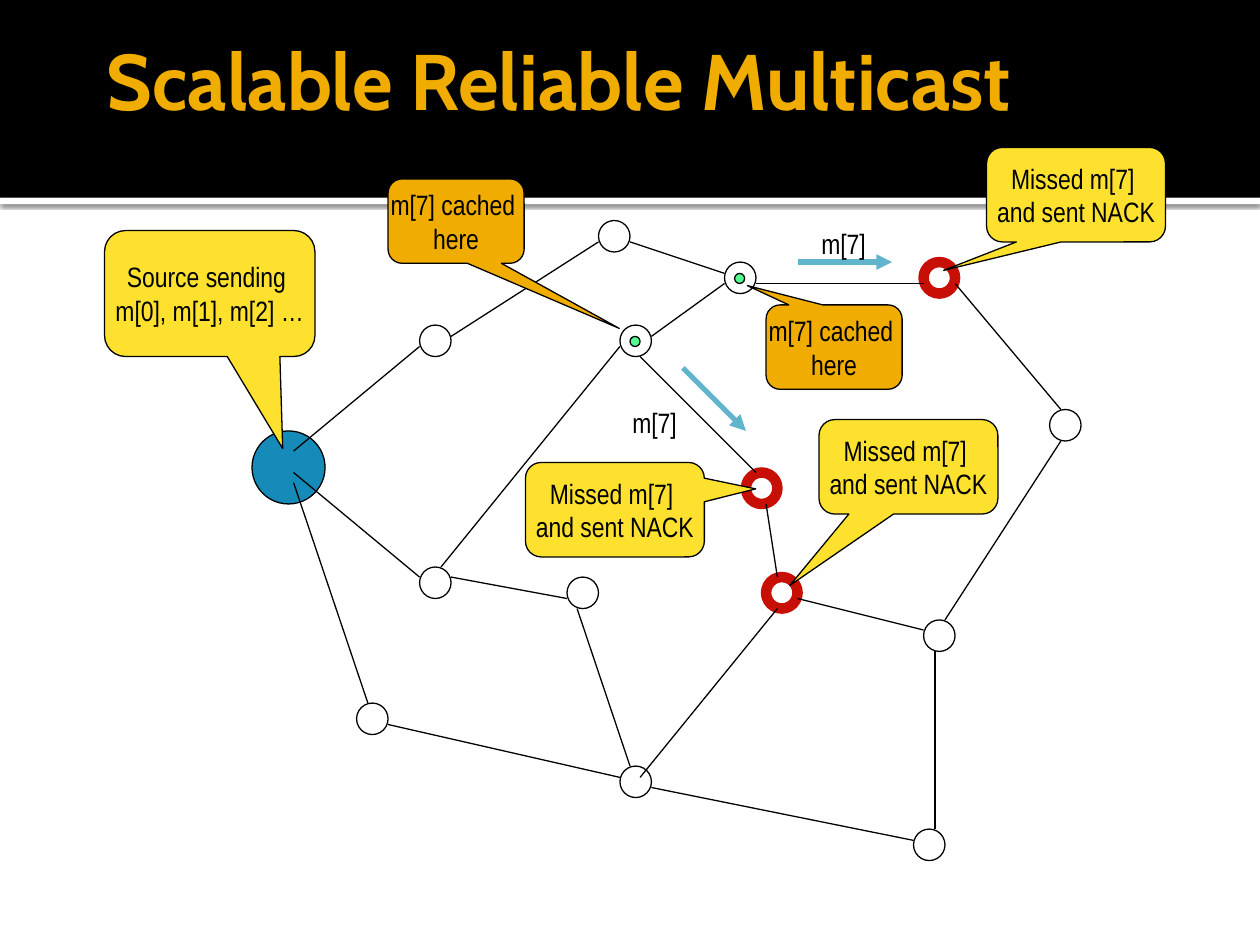
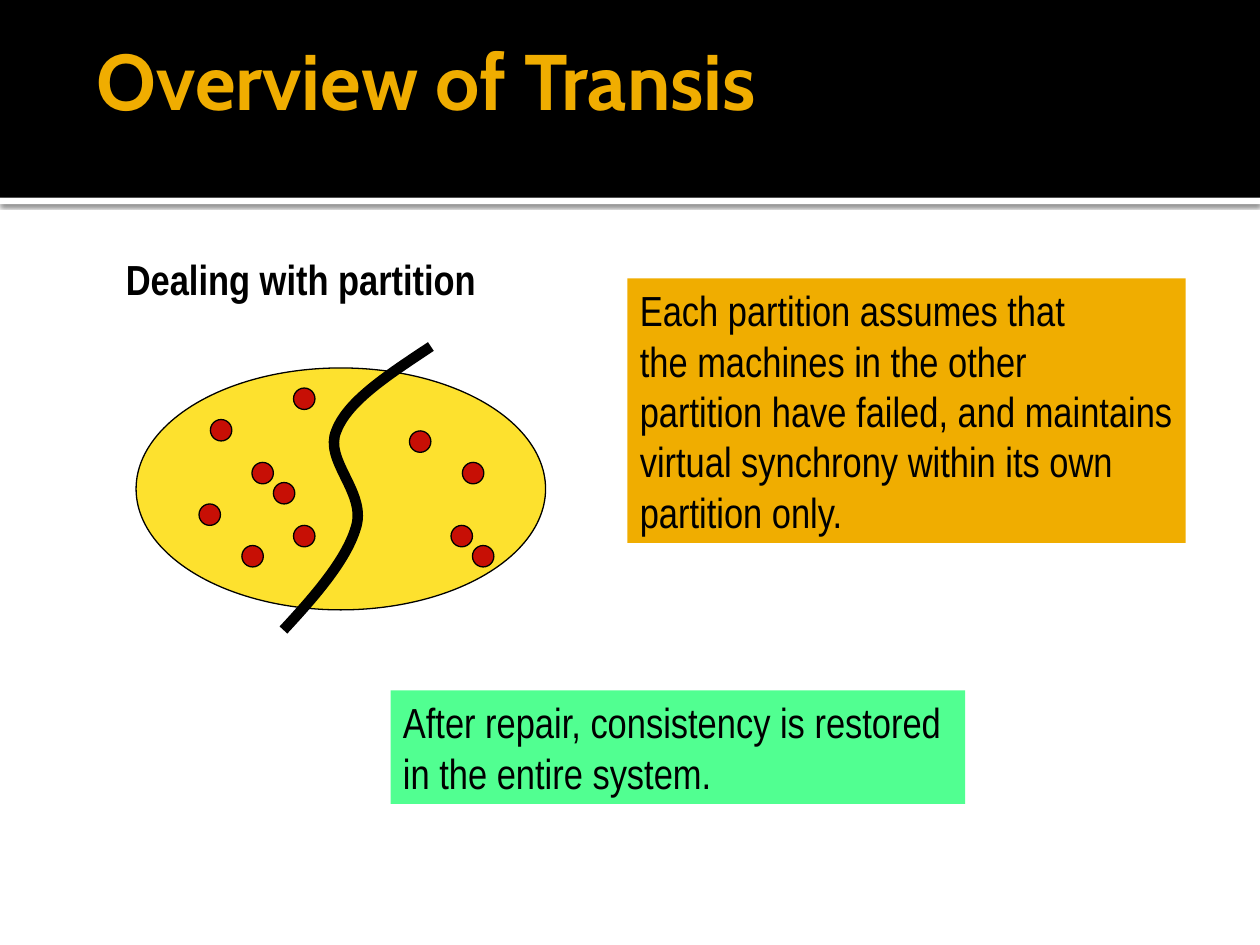
import pptx
import pptx.util
import pptx.dml.color
import pptx.enum.shapes
import pptx.enum.text
import pptx.oxml
import pptx.oxml.ns
import lxml.etree

Inches = pptx.util.Inches
Pt = pptx.util.Pt
SHAPE = pptx.enum.shapes.MSO_SHAPE
ANCHOR = pptx.enum.text.MSO_ANCHOR
ALIGN = pptx.enum.text.PP_ALIGN
AUTO = pptx.enum.text.MSO_AUTO_SIZE
qn = pptx.oxml.ns.qn

BLACK, WHITE = "000000", "FFFFFF"
ORANGE, YELLOW, GREEN = "F0AD00", "FDE12E", "51FF91"
RED, BLUE, SKY = "C70F05", "168BBA", "60B5CC"


def color(value):
    return pptx.dml.color.RGBColor.from_string(value)


class Deck:
    body_font, title_font = "Arial Narrow", "Cabin"

    def __init__(self):
        self.prs = pptx.Presentation()
        self.prs.slide_width, self.prs.slide_height = Inches(10), Inches(7.5)
        self.s = None

    def slide(self, title, left):
        self.s = self.prs.slides.add_slide(self.prs.slide_layouts[6])
        self.s.background.fill.solid()
        self.s.background.fill.fore_color.rgb = color(WHITE)
        # Header band with a shadowed white rule
        rule = self.shape(SHAPE.RECTANGLE, (0, 1.57, 10, 0.05), WHITE, None)
        effects = rule._element.spPr.find(qn("a:effectLst"))
        shadow = lxml.etree.SubElement(effects, qn("a:outerShdw"), blurRad=str(Pt(2.5)),
                                       dist=str(Pt(0.8)), dir="5400000")
        tone = lxml.etree.SubElement(shadow, qn("a:srgbClr"), val=BLACK)
        lxml.etree.SubElement(tone, qn("a:alpha"), val="60000")
        self.shape(SHAPE.RECTANGLE, (0, 0, 10, 1.57), BLACK, None)
        # Title
        sp = self.textbox((left, 0, 8.5, 1.25))
        self.text(sp, [title], 45, self.title_font, ORANGE, bold=True, anchor=ANCHOR.MIDDLE,
                  wrap=True)
        sp.text_frame.margin_right = Inches(0.05)

    def paint(self, sp, fill, line, weight):
        sp.shadow.inherit = False
        if fill:
            sp.fill.solid()
            sp.fill.fore_color.rgb = color(fill)
        else:
            sp.fill.background()
        if line:
            sp.line.color.rgb = color(line)
            sp.line.width = Pt(weight)
        else:
            sp.line.fill.background()

    def shape(self, kind, box, fill=None, line=BLACK, weight=0.75):
        sp = self.s.shapes.add_shape(kind, *map(Inches, box))
        self.paint(sp, fill, line, weight)
        return sp

    def circle(self, left, top, size, fill=None, line=BLACK, weight=0.75):
        return self.shape(SHAPE.OVAL, (left, top, size, size), fill, line, weight)

    def textbox(self, box):
        return self.s.shapes.add_textbox(*map(Inches, box))

    def text(self, sp, lines, size, font=body_font, ink=BLACK, bold=False,
             align=ALIGN.LEFT, anchor=ANCHOR.TOP, wrap=False, grow=False):
        tf = sp.text_frame
        tf.word_wrap, tf.vertical_anchor = wrap, anchor
        tf.auto_size = AUTO.SHAPE_TO_FIT_TEXT if grow else AUTO.NONE
        for i, line in enumerate(lines):
            p = tf.paragraphs[0] if i == 0 else tf.add_paragraph()
            p.alignment = align
            r = p.add_run()
            r.text = line
            r.font.size, r.font.name, r.font.bold = Pt(size), font, bold
            r.font.color.rgb = color(ink)

    def label(self, box, line, size=16, bold=False):
        self.text(self.textbox(box), [line], size, bold=bold, grow=True)

    def panel(self, box, fill, lines):
        sp = self.shape(SHAPE.RECTANGLE, box, fill, None)
        self.text(sp, lines, 24, grow=True)

    def callout(self, box, tip, fill, lines):
        sp = self.shape(SHAPE.ROUNDED_RECTANGULAR_CALLOUT, box, fill)
        for i, value in enumerate((*tip, 0.167)):
            sp.adjustments[i] = value
        self.text(sp, lines, 16, align=ALIGN.CENTER, anchor=ANCHOR.MIDDLE)

    def line(self, x1, y1, x2, y2, ink=BLACK, weight=0.75, arrow=False):
        cx = self.s.shapes.add_connector(pptx.enum.shapes.MSO_CONNECTOR.STRAIGHT,
                                         *map(Inches, (x1, y1, x2, y2)))
        cx.line.color.rgb = color(ink)
        cx.line.width = Pt(weight)
        if arrow:
            lxml.etree.SubElement(cx.line._get_or_add_ln(), qn("a:tailEnd"), type="triangle")
        lxml.etree.SubElement(cx._element.spPr, qn("a:effectLst"))

    def curve(self, points, ink, weight):
        """Draw Bézier segments: a start, then two controls and an end each."""
        start, *rest = [tuple(map(Inches, pt)) for pt in points]
        builder = self.s.shapes.build_freeform(*start)
        builder.add_line_segments(rest, close=False)
        sp = builder.convert_to_shape()
        self.paint(sp, None, ink, weight)
        steps = sp._element.xpath(".//a:lnTo")
        for i in range(0, len(steps), 3):
            bezier = lxml.etree.Element(qn("a:cubicBezTo"))
            steps[i].addprevious(bezier)
            for step in steps[i:i + 3]:
                bezier.append(step[0])
                step.getparent().remove(step)


def multicast_slide(deck):
    deck.slide("Scalable Reliable Multicast", 0.75)

    # Network nodes
    deck.circle(2, 3.42, 0.58, BLUE)
    for left, top in [(3.33, 2.58), (4.75, 1.75), (4.92, 2.58), (3.33, 4.5), (4.5, 4.58),
                      (4.92, 6.08), (7.33, 4.92), (7.25, 6.58), (5.75, 2.08),
                      (8.33, 3.25), (2.83, 5.58)]:
        deck.circle(left, top, 0.25)
    for left, top in [(5.92, 3.75), (6.08, 4.58), (7.33, 2.08)]:
        deck.circle(left, top, 0.25, line=RED, weight=6)

    # Network links
    for link in [(2.33, 3.58, 3.33, 2.75), (2.33, 3.75, 3.33, 4.58), (2.33, 3.83, 2.92, 5.58),
                 (3.08, 5.75, 4.92, 6.17), (3.58, 4.58, 4.5, 4.75), (4.58, 4.83, 5, 6.08),
                 (5, 1.92, 5.75, 2.17), (5.17, 2.67, 5.75, 2.25), (6, 2.25, 7.33, 2.25),
                 (3.58, 2.67, 4.75, 1.92), (5.08, 2.83, 6, 3.75), (5.17, 6.25, 7.25, 6.67),
                 (6.08, 4, 6.17, 4.58), (6.17, 4.83, 5.08, 6.17), (7.58, 2.25, 8.42, 3.25),
                 (6.33, 4.75, 7.33, 5), (8.42, 3.5, 7.5, 4.92), (4.92, 2.75, 3.5, 4.5),
                 (7.42, 5.17, 7.42, 6.58)]:
        deck.line(*link)

    # Cached copies
    for left, top in [(5.83, 2.17), (5, 2.67)]:
        deck.circle(left, top, 0.08, GREEN)

    # Callouts
    deck.callout((0.83, 1.83, 1.67, 1), (0.347, 1.231), YELLOW,
                 ["Source sending ", "m[0], m[1], m[2] …"])
    for left, top, tip in [(7.83, 1.17, (-0.74, 0.801)), (6.5, 3.33, (-0.663, 1.255)),
                           (4.17, 3.67, (0.787, -0.22))]:
        deck.callout((left, top, 1.42, 0.75), tip, YELLOW, ["Missed m[7] ", "and sent NACK"])
    for left, top, tip in [(6.08, 2.42, (-0.638, -0.729)), (3.08, 1.42, (1.199, 1.271))]:
        deck.callout((left, top, 1.08, 0.67), tip, ORANGE, ["m[7] cached ", "here"])

    # Retransmissions
    for arrow in [(6.33, 2.08, 7.08, 2.08), (5.42, 2.92, 5.92, 3.42)]:
        deck.line(*arrow, ink=SKY, weight=3, arrow=True)
    for left, top in [(6.42, 1.75), (4.92, 3.17)]:
        deck.label((left, top, 0.56, 0.37), "m[7]")


def partition_slide(deck):
    deck.slide("Overview of Transis", 0.67)

    # System split in two
    deck.shape(SHAPE.OVAL, (1.08, 2.92, 3.25, 1.92), YELLOW)
    deck.curve([(3.42, 2.75), (3.09, 2.97), (2.76, 3.18), (2.67, 3.42),
                (2.57, 3.65), (2.9, 3.9), (2.83, 4.17),
                (2.76, 4.43), (2.51, 4.72), (2.25, 5)], BLACK, 6)

    # Explanations
    deck.panel((4.98, 2.21, 4.43, 2.1), ORANGE,
               ["Each partition assumes that", "the machines in the other",
                "partition have failed, and maintains", "virtual synchrony within its own",
                "partition only."])
    deck.panel((3.1, 5.48, 4.56, 0.9), GREEN,
               ["After repair, consistency is restored", "in the entire system."])
    deck.label((0.9, 1.96, 2.98, 0.5), "Dealing with partition", 24, bold=True)

    # Machines
    for left, top in [(1.67, 3.33), (2.33, 3.08), (1.92, 4.33), (2.33, 4.17), (3.67, 3.67),
                      (3.58, 4.17), (3.25, 3.42), (3.75, 4.33), (2, 3.67), (2.17, 3.83),
                      (1.58, 4)]:
        deck.circle(left, top, 0.17, RED)


def main():
    deck = Deck()
    multicast_slide(deck)
    partition_slide(deck)
    deck.prs.save("out.pptx")


if __name__ == "__main__":
    main()
